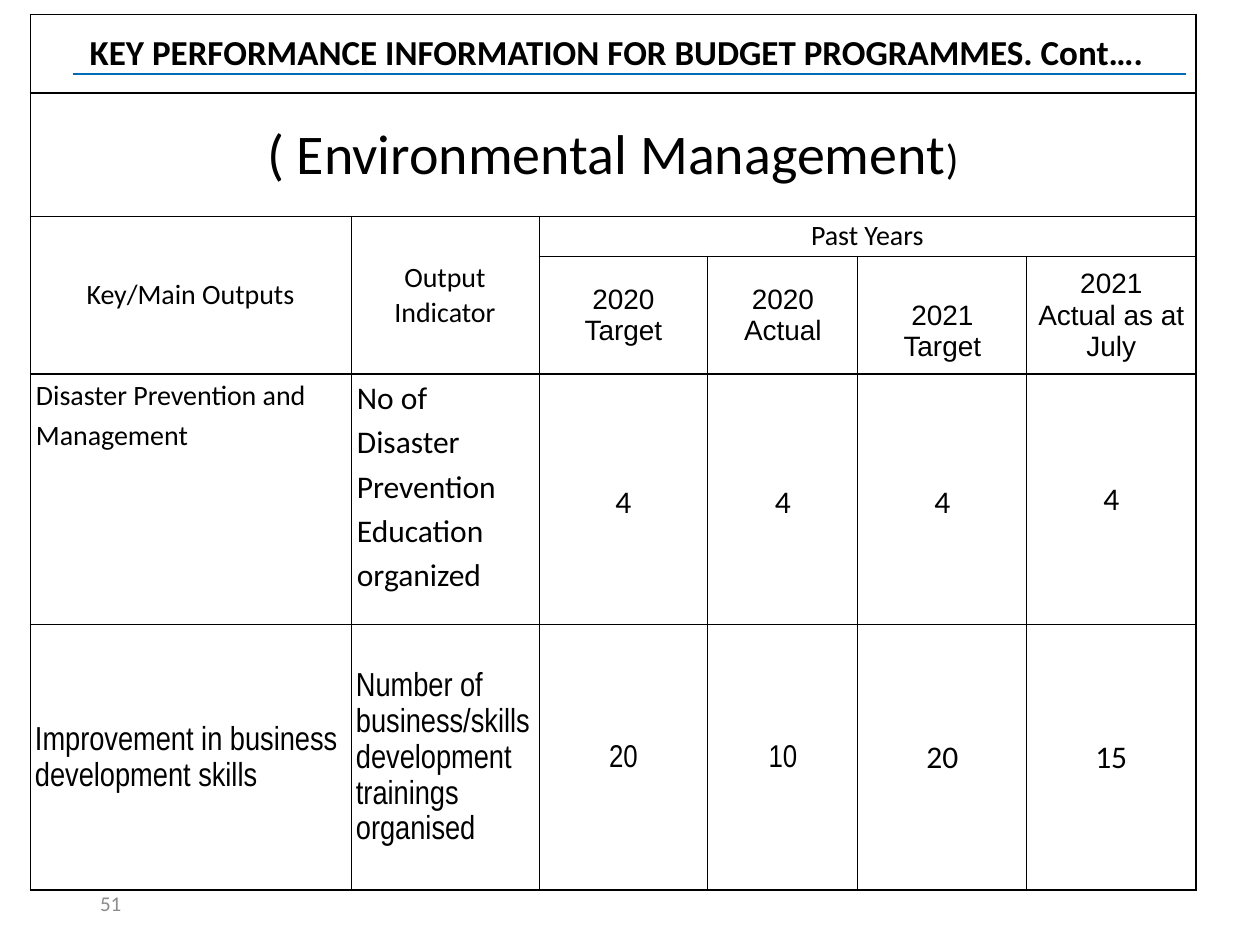
from collections import namedtuple
from lxml import etree
from pptx import Presentation
from pptx import util as u
from pptx.dml.color import RGBColor
from pptx.enum import shapes, text
from pptx.oxml.ns import qn

Theme = namedtuple("Theme", "ink rule grey head big mid base body skill note thin thick")
T = Theme(ink="000000", rule="006CB8", grey="8C8C8C", head=20, big=32, mid=24,
          base=16, body=18, skill=19, note=12, thin=0.5, thick=1)
SANS, ARIAL, SLIM = "Calibri", "Arial", "Arial Narrow"
PLAIN = "{2D5ABB26-0587-4C30-8999-92F81FD0307C}"  # table style without grid
MID, TOP = text.MSO_ANCHOR.MIDDLE, text.MSO_ANCHOR.TOP

COLS = [321, 188, 169, 150, 169, 169]
ROWS = [79, 123, 40, 118, 251, 265]
# first row, first column, last row, last column
SPANS = [(0, 0, 0, 5), (1, 0, 1, 5), (2, 0, 3, 0), (2, 1, 3, 1), (2, 2, 2, 5)]
HEAVY = {"row": {1, 4, 6}, "col": {6}}  # grid edges drawn thicker


def px(n):
    return u.Emu(round(n * 914400 / 126))


def add_run(para, words, size, font=SANS, color=T.ink, bold=False):
    run = para.add_run()
    run.text = words
    run.font.size, run.font.name, run.font.bold = u.Pt(size), font, bold
    run.font.color.rgb = RGBColor.from_string(color)


def fill_cell(cell, paras, pad, anchor=MID, center=True, space=None):
    """Each paragraph is a list of (words, size, font[, color, bold]) runs."""
    cell.vertical_anchor = anchor
    cell.margin_left, cell.margin_top, cell.margin_right, cell.margin_bottom = map(px, pad)
    frame = cell.text_frame
    for i, runs in enumerate(paras):
        para = frame.paragraphs[0] if i == 0 else frame.add_paragraph()
        para.alignment = text.PP_ALIGN.CENTER if center else text.PP_ALIGN.LEFT
        if space:
            para.line_spacing = space
        for run in runs:
            add_run(para, *run)


def draw_edge(props, pos, side, width):
    line = etree.Element(qn("a:ln" + side), w=str(u.Pt(width)))
    fill = etree.SubElement(line, qn("a:solidFill"))
    etree.SubElement(fill, qn("a:srgbClr"), val=T.ink)
    props.insert(pos, line)


def draw_grid(table):
    boxes = {(r, c): box for box in SPANS
             for r in range(box[0], box[2] + 1) for c in range(box[1], box[3] + 1)}
    for r in range(len(ROWS)):
        for c in range(len(COLS)):
            cell = table.cell(r, c)
            cell.fill.background()
            r0, c0, r1, c1 = boxes.get((r, c), (r, c, r, c))
            first = (r, c) == (r0, c0)
            sides = [("L", "col", c0, c == c0), ("R", "col", c1 + 1, c == c1),
                     ("T", "row", r0, r == r0), ("B", "row", r1 + 1, r == r1)]
            pos = 0
            for side, axis, edge, outer in sides:
                if first or outer:
                    width = T.thick if edge in HEAVY[axis] else T.thin
                    draw_edge(cell._tc.get_or_add_tcPr(), pos, side, width)
                    pos += 1


def fill_head(table):
    pad = (1, 1, 1, 0)
    title = " KEY PERFORMANCE INFORMATION FOR BUDGET PROGRAMMES. Cont…."
    fill_cell(table.cell(0, 0), [[(title, T.head, SANS, T.ink, True)]], pad)
    fill_cell(table.cell(1, 0), [[("( Environmental Management", T.big), (")", T.mid)]], pad)
    for c, words in enumerate(["Key/Main Outputs", "Output Indicator", "Past Years"]):
        fill_cell(table.cell(2, c), [[(words, T.base)]], pad)
    years = [("2020", "Target", 1), ("2020", "Actual", 1),
             ("2021", "Target", 33), ("2021", "Actual as at July", 1)]
    for c, (year, kind, top) in enumerate(years, 2):
        fill_cell(table.cell(3, c), [[(year, T.base, ARIAL)], [(kind, T.base, ARIAL)]],
                  (1, top, 1, 0))


def fill_body(table):
    # row, side padding, anchor of labels, labels, values
    data = [
        (4, 6, TOP,
         [("Disaster Prevention and Management", T.base, SANS),
          ("No of Disaster Prevention Education organized", T.body, SANS)],
         [("4", SANS, 1.15), ("4", SANS, 1.15), ("4", SANS, 1.15), ("4", SANS, None)]),
        (5, 5, MID,
         [("Improvement in business development skills", T.skill, SLIM),
          ("Number of business/skills development trainings organised", T.skill, SLIM)],
         [("20", SLIM, 1.15), ("10", SLIM, 1.15), ("20", SANS, None), ("15", SANS, None)]),
    ]
    for r, side, anchor, labels, values in data:
        pad = (side, 0, side, 0)
        for c, label in enumerate(labels):
            fill_cell(table.cell(r, c), [[label]], pad, anchor, False, 1.15)
        for c, (value, font, space) in enumerate(values, 2):
            fill_cell(table.cell(r, c), [[(value, T.body, font)]], pad, space=space)


def add_grid(slide, x, y):
    frame = slide.shapes.add_table(len(ROWS), len(COLS), px(x), px(y),
                                   px(sum(COLS)), px(sum(ROWS)))
    table = frame.table
    table.first_row = table.horz_banding = False
    table._tbl.tblPr.find(qn("a:tableStyleId")).text = PLAIN
    for col, wide in zip(table.columns, COLS):
        col.width = px(wide)
    for row, high in zip(table.rows, ROWS):
        row.height = px(high)
    for r0, c0, r1, c1 in SPANS:
        table.cell(r0, c0).merge(table.cell(r1, c1))
    fill_head(table)
    fill_body(table)
    draw_grid(table)


def add_rule(slide, x, y, wide):
    rule = slide.shapes.add_connector(shapes.MSO_CONNECTOR.STRAIGHT,
                                      px(x), px(y), px(x + wide), px(y))
    rule.line.color.rgb = RGBColor.from_string(T.rule)
    rule.line.width = u.Pt(1)
    etree.SubElement(rule._element.spPr, qn("a:effectLst"))


def add_number(slide, x, y, wide, high):
    frame = slide.shapes.add_textbox(px(x), px(y), px(wide), px(high)).text_frame
    frame.margin_left = frame.margin_top = frame.margin_right = frame.margin_bottom = 0
    frame.word_wrap = True
    add_run(frame.paragraphs[0], "51", T.note, color=T.grey)


def main():
    deck = Presentation()
    deck.slide_width, deck.slide_height = px(1260), px(945)
    slide = deck.slides.add_slide(deck.slide_layouts[6])
    add_rule(slide, 73, 74, 1113)      # line under the heading
    add_number(slide, 100, 891, 57, 25)  # page number
    add_grid(slide, 30, 14)            # performance table
    deck.save("out.pptx")


if __name__ == "__main__":
    main()
